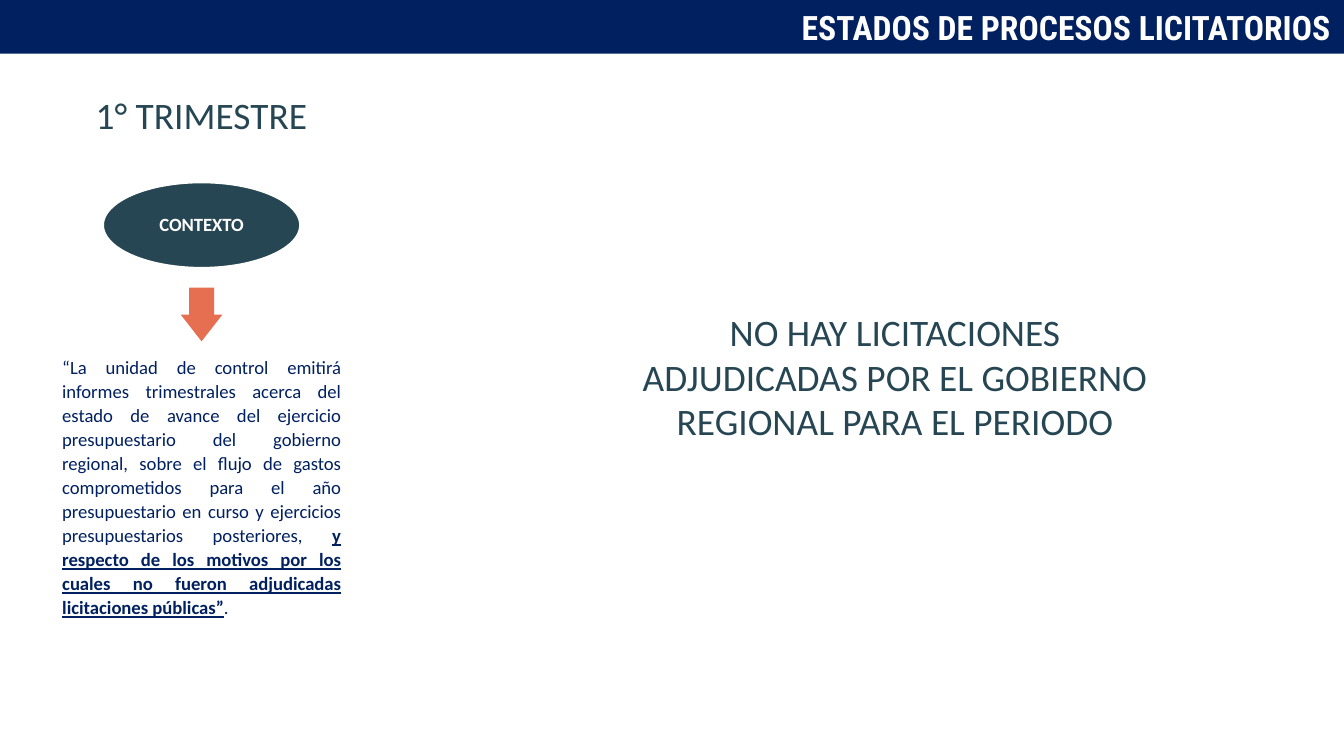
from pptx import Presentation
from pptx.dml.color import RGBColor
from pptx.enum.shapes import MSO_SHAPE
from pptx.enum.text import MSO_ANCHOR, MSO_AUTO_SIZE, PP_ALIGN
from pptx.util import Inches, Pt

COLORS = {"navy": "002060", "teal": "264653", "coral": "E76F51", "white": "FFFFFF"}
BODY_FONT = "Calibri"
WIDTH = 10
HEIGHT = WIDTH * 9 / 16
COLUMN_CENTER = 0.15 * WIDTH  # axis shared by the parts on the left
RESULT_CENTER = 6.66

TITLE = "ESTADOS DE PROCESOS LICITATORIOS"
QUARTER = "1° TRIMESTRE"
CONTEXT = "CONTEXTO"
QUOTE = [  # text, emphasised
    ("“La unidad de control emitirá informes trimestrales acerca del estado de "
     "avance del ejercicio presupuestario del gobierno regional, sobre el flujo "
     "de gastos comprometidos para el año presupuestario en curso y ejercicios "
     "presupuestarios posteriores, ", False),
    ("y respecto de los motivos por los cuales no fueron adjudicadas "
     "licitaciones públicas”", True),
    (".", False),
]
RESULT = "NO HAY LICITACIONES ADJUDICADAS POR EL GOBIERNO REGIONAL PARA EL PERIODO"


def rgb(name):
    return RGBColor.from_string(COLORS[name])


def centered(center, top, width, height):
    """Box in EMU whose horizontal middle is at center (inches)."""
    return [Inches(v) for v in (center - width / 2, top, width, height)]


def write(frame, runs, size, color, align, font=BODY_FONT, bold=False, line_spacing=None):
    """Fill the first paragraph with (text, emphasised) runs."""
    frame.word_wrap = True
    paragraph = frame.paragraphs[0]
    paragraph.alignment = align
    paragraph.line_spacing = line_spacing
    for text, emphasised in runs:
        run = paragraph.add_run()
        run.text = text
        run.font.name = font
        run.font.size = Pt(size)
        run.font.bold = bold or emphasised
        run.font.underline = emphasised
        run.font.color.rgb = rgb(color)


def add_text(slide, box, *args, **kwargs):
    frame = slide.shapes.add_textbox(*box).text_frame
    write(frame, *args, **kwargs)
    frame.auto_size = MSO_AUTO_SIZE.SHAPE_TO_FIT_TEXT


def add_figure(slide, kind, box, color):
    figure = slide.shapes.add_shape(kind, *box)
    figure.shadow.inherit = False
    figure.fill.solid()
    figure.fill.fore_color.rgb = rgb(color)
    figure.line.fill.background()
    return figure


def set_margins(frame, margin):
    frame.margin_left = frame.margin_right = Inches(margin)
    frame.margin_top = frame.margin_bottom = Inches(margin)
    frame.vertical_anchor = MSO_ANCHOR.MIDDLE


def main():
    deck = Presentation()
    deck.slide_width, deck.slide_height = Inches(WIDTH), Inches(HEIGHT)
    slide = deck.slides.add_slide(deck.slide_layouts[5])

    title = slide.shapes.title
    title.left, title.top, title.width, title.height = centered(WIDTH / 2, 0, WIDTH, 0.4)
    title.fill.solid()
    title.fill.fore_color.rgb = rgb("navy")
    set_margins(title.text_frame, 0.1)
    title.text_frame.auto_size = MSO_AUTO_SIZE.NONE
    write(title.text_frame, [(TITLE, False)], 18, "white", PP_ALIGN.RIGHT,
          font="Roboto Condensed", bold=True)

    add_text(slide, centered(COLUMN_CENTER, 0.64, 3.27, 0.44),
             [(QUARTER, False)], 20, "teal", PP_ALIGN.CENTER)

    arrow = add_figure(slide, MSO_SHAPE.DOWN_ARROW,
                       centered(COLUMN_CENTER, 2.14, 0.31, 0.4), "coral")
    arrow.adjustments[0] = 0.6
    arrow.adjustments[1] = 0.64

    context = add_figure(slide, MSO_SHAPE.OVAL,
                         centered(COLUMN_CENTER, 1.35, 1.48, 0.65), "teal")
    context.line.color.rgb = rgb("white")
    context.line.width = Pt(2)
    set_margins(context.text_frame, 0.03)
    write(context.text_frame, [(CONTEXT, False)], 10, "white", PP_ALIGN.CENTER,
          bold=True, line_spacing=0.9)

    add_text(slide, centered(COLUMN_CENTER, 2.59, 2.27, 2.25),
             QUOTE, 10, "navy", PP_ALIGN.JUSTIFY, line_spacing=1.07)
    add_text(slide, centered(RESULT_CENTER, 2.25, 4.18, 1.11),
             [(RESULT, False)], 20, "teal", PP_ALIGN.CENTER)

    deck.save("out.pptx")


if __name__ == "__main__":
    main()
